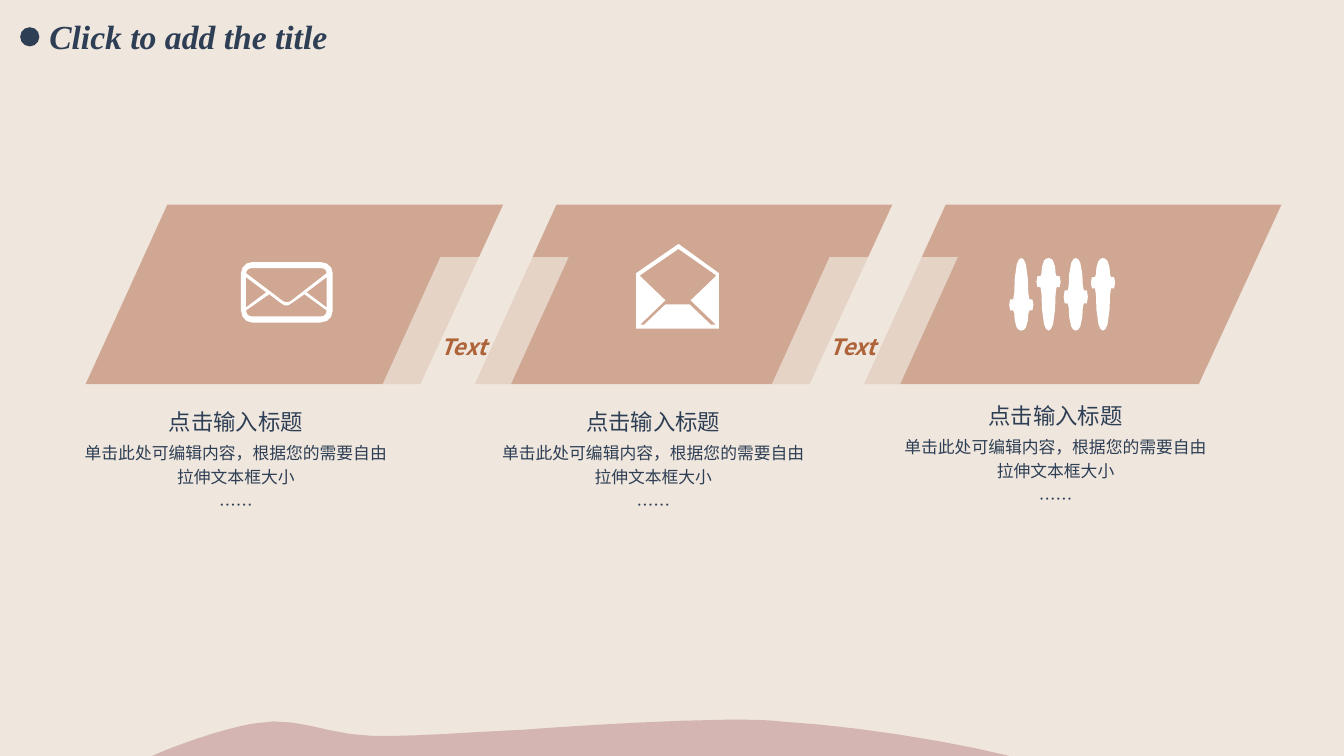
from lxml import etree
from pptx import Presentation
from pptx.dml.color import RGBColor
from pptx.enum.shapes import MSO_SHAPE
from pptx.enum.text import MSO_ANCHOR, MSO_AUTO_SIZE, PP_ALIGN
from pptx.oxml.ns import qn
from pptx.util import Inches, Pt

OVAL, SLANT = MSO_SHAPE.OVAL, MSO_SHAPE.PARALLELOGRAM
CENTER, LEFT = PP_ALIGN.CENTER, PP_ALIGN.LEFT
MIDDLE, GROW = MSO_ANCHOR.MIDDLE, MSO_AUTO_SIZE.SHAPE_TO_FIT_TEXT

# Content
SERIF, SANS = "Times New Roman", "Noto Sans CJK SC"
CREAM, NAVY, TAN, RUST = "EFE6DD", "2E3F55", "D0A793", "AE6339"
WHITE, PINK = "FFFFFF", "D4B5B2"
TITLE = "Click to add the title"
LINK_LABELS = ["Text", "Text"]
CAPTION = [  # text, size
    ("点击输入标题", 16),
    ("单击此处可编辑内容，根据您的需要自由拉伸文本框大小", 12),
    ("……", 12),
]
CAPTION_SPOTS = [(0.84, 4), (4.98, 4), (8.97, 3.94)]

# Outlines: M move, L line, C curve, Z close
OPEN_ENVELOPE = """
M 6.73 2.42 L 6.31 2.71 L 6.31 3.26 L 7.13 3.26 L 7.13 2.71 Z
M 7.05 3.22 L 6.84 3.02 L 6.6 3.02 L 6.39 3.22 L 6.35 3.22 L 6.6 2.98
L 6.35 2.74 L 6.35 2.73 L 6.73 2.47 L 7.1 2.73 L 7.1 2.74 L 6.85 2.98 L 7.1 3.22 Z"""
CLOSED_ENVELOPE = """
M 2.88 2.99 C 2.86 3 2.83 3 2.81 2.99 L 2.44 2.71
C 2.44 2.68 2.47 2.66 2.5 2.66 L 3.18 2.66 C 3.22 2.66 3.24 2.68 3.24 2.71 Z
M 3.24 3.05 L 3.04 2.9 L 3.24 2.75 Z
M 3.24 3.08 C 3.24 3.12 3.22 3.14 3.18 3.14 L 2.5 3.14
C 2.47 3.14 2.44 3.12 2.44 3.08 L 2.67 2.92 L 2.79 3.01
C 2.82 3.04 2.86 3.04 2.89 3.01 L 3.02 2.92 Z
M 2.44 2.75 L 2.64 2.9 L 2.44 3.05 Z
M 3.18 2.6 L 2.5 2.6 C 2.44 2.6 2.39 2.65 2.39 2.71 L 2.39 3.08
C 2.39 3.15 2.44 3.2 2.5 3.2 L 3.18 3.2 C 3.25 3.2 3.3 3.15 3.3 3.08
L 3.3 2.71 C 3.3 2.65 3.25 2.6 3.18 2.6 Z"""
HILL = """
M 7.21 7.14 C 6.33 7.15 5.19 7.24 5.19 7.24 C 4.51 7.27 4.13 7.31 3.68 7.3
C 3.23 7.29 2.94 7.09 2.5 7.18 C 2.28 7.22 1.95 7.32 1.65 7.44 L 1.51 7.5
L 10.01 7.5 L 9.97 7.49 C 9.4 7.35 8.46 7.2 7.77 7.16
C 7.61 7.14 7.42 7.14 7.21 7.14 Z"""
SLIDER_KNOBS = [(2.97, 3.08), (2.74, 2.85), (2.88, 3.01), (2.75, 2.86)]  # top, bottom
# Half width, and share of the way from stem tip to knob
SLIDER_PROFILE = [(0, 0), (0.025, 0.04), (0.045, 0.15), (0.065, 0.5),
                  (0.07, 0.85), (0.08, 1), (0.11, 1)]


def rgb(code):
    return RGBColor.from_string(code)


def paint(sp, color, alpha=None):
    sp.shadow.inherit = False
    sp.fill.solid()
    sp.fill.fore_color.rgb = rgb(color)
    sp.line.fill.background()
    if alpha is not None:
        clr = sp.fill._xPr.find(".//" + qn("a:srgbClr"))
        etree.SubElement(clr, qn("a:alpha")).set("val", str(alpha * 1000))


def write(p, text, size, font, color, align=LEFT, strong=False):
    p.alignment = align
    r = p.add_run()
    r.text = text
    f = r.font
    f.name, f.size, f.color.rgb = font, Pt(size), rgb(color)
    f.bold = f.italic = strong
    etree.SubElement(f._element, qn("a:ea")).set("typeface", font)


def bezier(a, b, c, d, steps):
    for i in range(1, steps + 1):
        t = i / steps
        u = 1 - t
        yield tuple(u**3 * a[k] + 3 * u * u * t * b[k] + 3 * u * t * t * c[k] + t**3 * d[k]
                    for k in (0, 1))


def contours(outline, steps):
    result = []
    for part in outline.split("Z")[:-1]:
        pts, nums = [], []
        for token in part.split():
            if token in "MLC":
                cmd, nums = token, []
                continue
            nums.append(float(token))
            if len(nums) == (6 if cmd == "C" else 2):
                pairs = list(zip(nums[::2], nums[1::2]))
                pts += bezier(pts[-1], *pairs, steps) if cmd == "C" else pairs
        result.append(pts)
    return result


def draw(parts, color):
    emu = [[(Inches(x), Inches(y)) for x, y in pts] for pts in parts]
    fb = slide.shapes.build_freeform(*emu[0][0], scale=1.0)
    for i, pts in enumerate(emu):
        if i:
            fb.move_to(*pts[0])
        fb.add_line_segments(pts[1:], close=True)
    paint(fb.convert_to_shape(), color)


def slider_quarter(cx, side, tip, knob, mid):
    """Points from the tip of the stem to the outer middle of the knob."""
    pts = [(cx + side * x, tip + share * (knob - tip)) for x, share in SLIDER_PROFILE]
    return pts + [(cx + side * 0.12, mid)]


prs = Presentation()
prs.slide_width, prs.slide_height = Inches(13.33), Inches(7.5)
slide = prs.slides.add_slide(prs.slide_layouts[6])
slide.background.fill.solid()
slide.background.fill.fore_color.rgb = rgb(CREAM)


def add_text_box(x, y, w, h):
    tf = slide.shapes.add_textbox(Inches(x), Inches(y), Inches(w), Inches(h)).text_frame
    tf.word_wrap, tf.auto_size = True, GROW
    return tf


# Title with its dot
write(add_text_box(0.39, 0.11, 3.15, 0.5).paragraphs[0], TITLE, 24, SERIF, NAVY, strong=True)
sp = slide.shapes.add_shape(OVAL, Inches(0.2), Inches(0.27), Inches(0.19), Inches(0.19))
paint(sp, NAVY)

# Captions
for x, y in CAPTION_SPOTS:
    tf = add_text_box(x, y, 3, 1.13)
    tf.margin_left = tf.margin_right = tf.margin_top = tf.margin_bottom = 0
    for i, (text, size) in enumerate(CAPTION):
        p = tf.add_paragraph() if i else tf.paragraphs[0]
        p.line_spacing, p.space_before = 1.2, Pt(size * 0.2)
        write(p, text, size, SANS, NAVY, CENTER)

# Slanted panels, evenly spaced
PITCH, TOP, BOTTOM, LEAN, BASE = 3.86, 2.03, 3.81, 0.81, 3.33
for i in range(3):
    x = 0.85 + i * PITCH
    draw([[(x + LEAN, TOP), (x + LEAN + BASE, TOP), (x + BASE - 0.01, BOTTOM), (x, BOTTOM)]], TAN)

# Translucent links between panels
for i, label in enumerate(LINK_LABELS):
    sp = slide.shapes.add_shape(SLANT, Inches(3.56 + i * PITCH), Inches(2.55),
                                Inches(2.08), Inches(1.78))
    sp.adjustments[0] = 0.454
    paint(sp, CREAM, alpha=70)
    sp.text_frame.vertical_anchor = MIDDLE
    write(sp.text_frame.paragraphs[0], label, 16, SANS, RUST, CENTER, strong=True)

# Icons
draw(contours(OPEN_ENVELOPE, 3), WHITE)
draw(contours(CLOSED_ENVELOPE, 3), WHITE)
for i, (top, bottom) in enumerate(SLIDER_KNOBS):
    cx, mid = 10.13 + i * 0.27, (top + bottom) / 2
    right_top, right_low, left_low, left_top = (
        slider_quarter(cx, side, tip, knob, mid)
        for side, tip, knob in ((1, 2.56, top), (1, 3.28, bottom),
                                (-1, 3.28, bottom), (-1, 2.56, top)))
    # Shared end points are kept once
    draw([right_top + right_low[-2::-1] + left_low[1:] + left_top[-2:0:-1]], WHITE)

# Hill along the bottom edge
draw(contours(HILL, 6), PINK)

prs.save("out.pptx")
